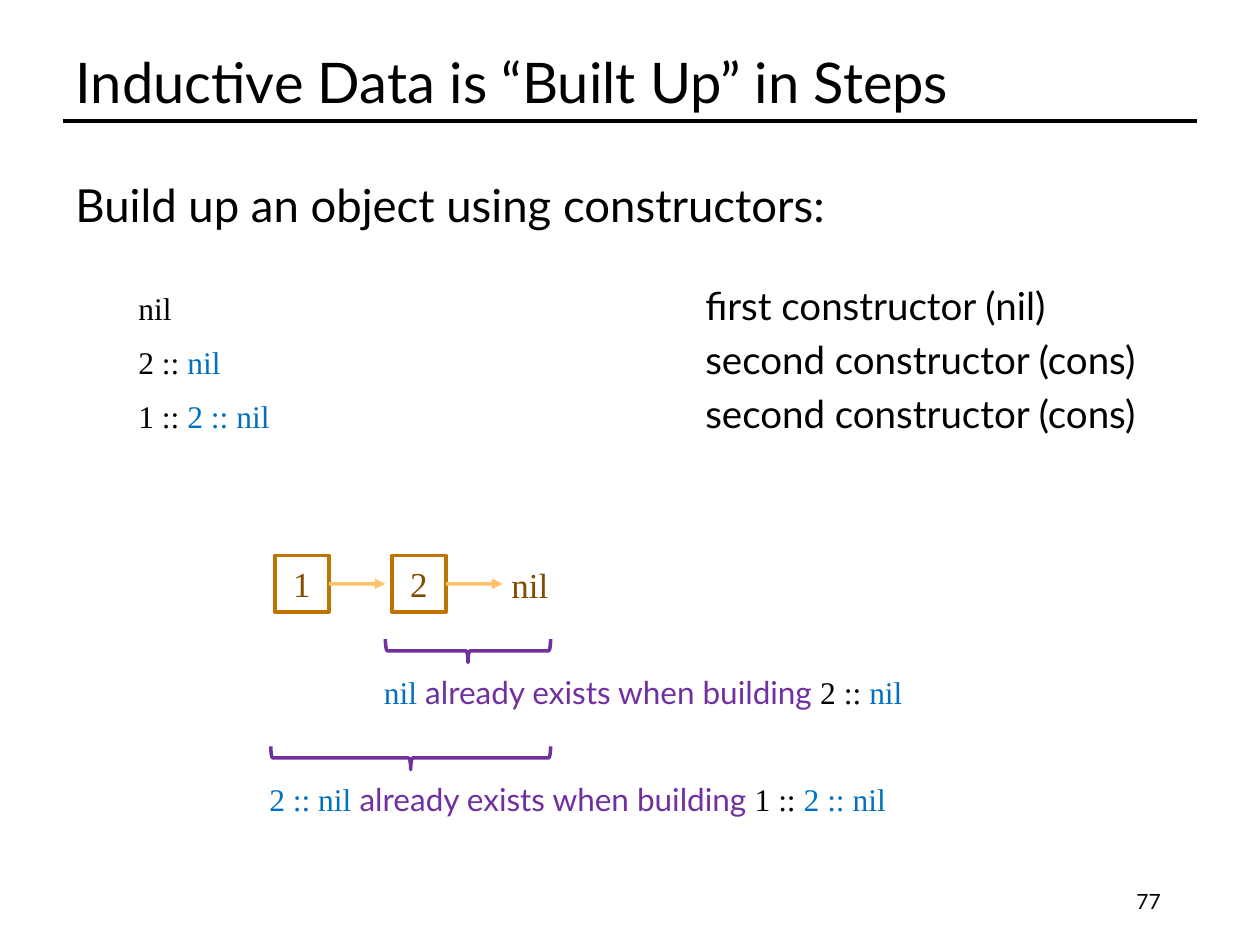
from lxml import etree
from pptx import Presentation
from pptx.dml.color import RGBColor
from pptx.enum.shapes import MSO_CONNECTOR, MSO_SHAPE
from pptx.enum.text import MSO_ANCHOR, PP_ALIGN
from pptx.oxml.ns import qn
from pptx.util import Cm, Pt

STRAIGHT = MSO_CONNECTOR.STRAIGHT
RECT, BRACE = MSO_SHAPE.RECTANGLE, MSO_SHAPE.LEFT_BRACE
MIDDLE, BOTTOM = MSO_ANCHOR.MIDDLE, MSO_ANCHOR.BOTTOM
LEFT, CENTER, RIGHT = PP_ALIGN.LEFT, PP_ALIGN.CENTER, PP_ALIGN.RIGHT

SANS, SERIF = "Lato", "Times New Roman"
BLACK, BLUE, PURPLE = "000000", "0070C0", "7030A0"
BROWN, ORANGE, AMBER = "804C00", "BF7300", "FFC266"
rgb = RGBColor.from_string


def add_runs(p, *runs):
    """Add (text, font, size, colour) runs to a paragraph."""
    for text, name, size, color in runs:
        r = p.add_run()
        r.text = text
        r.font.name, r.font.size = name, Pt(size)
        r.font.color.rgb = rgb(color)


def add_line(x1, y1, x2, y2, color):
    line = s.shapes.add_connector(STRAIGHT, Cm(x1), Cm(y1), Cm(x2), Cm(y2))
    line.line.color.rgb = rgb(color)
    line.line.width = Pt(2)
    etree.SubElement(line._element.spPr, qn("a:effectLst"))
    return line


prs = Presentation()
prs.slide_width, prs.slide_height = Cm(25.4), Cm(19.05)
s = prs.slides.add_slide(prs.slide_layouts[5])

# Title and rule
title = s.shapes.title
title.left, title.top, title.width, title.height = Cm(1.27), Cm(0.76), Cm(22.86), Cm(1.68)
title.text_frame.vertical_anchor = BOTTOM
p = title.text_frame.paragraphs[0]
p.text = "Inductive Data is “Built Up” in Steps"
p.alignment = LEFT
p.font.name, p.font.size, p.font.color.rgb = SANS, Pt(32), rgb(BLACK)
add_line(1.27, 2.44, 24.13, 2.44, BLACK)

# Construction steps: value and constructor aligned on two tab stops
tf = s.shapes.add_textbox(Cm(1.27), Cm(3.45), Cm(22.86), Cm(6.07)).text_frame
tf.word_wrap = True
add_runs(tf.paragraphs[0], ("Build up an object using constructors:", SANS, 26, BLACK))
steps = [("nil", "", "first constructor (nil)", 28.8),
         ("2 :: ", "nil", "second constructor (cons)", 4.4),
         ("1 :: ", "2 :: nil", "second constructor (cons)", 4.4)]
for new, existing, constructor, gap in steps:
    p = tf.add_paragraph()
    p.space_before = Pt(gap)
    add_runs(p, ("\t" + new, SERIF, 18, BLACK))
    if existing:
        add_runs(p, (existing, SERIF, 18, BLUE))
    add_runs(p, ("\t" + constructor, SANS, 22, BLACK))
    tabs = etree.SubElement(p._p.get_or_add_pPr(), qn("a:tabLst"))
    for stop in (1.27, 12.7):
        etree.SubElement(tabs, qn("a:tab"), pos=str(Cm(stop)), algn="l")

# Linked list: boxed nodes, each with an arrow to the next item
node_y, node_w, node_h = 11.2, 1.09, 1.14
for number, x in (("1", 5.54), ("2", 7.9)):
    node = s.shapes.add_shape(RECT, Cm(x), Cm(node_y), Cm(node_w), Cm(node_h))
    node.shadow.inherit = False
    node.fill.background()
    node.line.color.rgb = rgb(ORANGE)
    node.line.width = Pt(2)
    tf = node.text_frame
    tf.vertical_anchor = MIDDLE
    p = tf.paragraphs[0]
    p.alignment = CENTER
    add_runs(p, (number, SERIF, 20, BROWN))
    mid, right = node_y + node_h / 2, x + node_w
    arrow = add_line(right, mid, right + 1.14, mid, AMBER)
    arrow.begin_connect(node, 3)
    etree.SubElement(arrow.line._get_or_add_ln(), qn("a:tailEnd"), type="triangle")

tf = s.shapes.add_textbox(Cm(10.06), Cm(11.23), Cm(1.63), Cm(1.12)).text_frame
tf.word_wrap = True
add_runs(tf.paragraphs[0], ("nil", SERIF, 20, BROWN))

# Braces under the list, with captions; both end at the same right edge
brace_right, depth = 11.1, 0.47
captions = [(7.77, 13.12, 7.49, 13.44, 11.18, "nil", "2 :: "),
            (5.46, 15.28, 5.18, 15.6, 13.21, "2 :: nil", "1 :: ")]
for left, mid, x, y, width, existing, new in captions:
    span = brace_right - left
    brace = s.shapes.add_shape(BRACE, Cm(left + (span - depth) / 2),
                               Cm(mid - span / 2), Cm(depth), Cm(span))
    brace.rotation = 270
    brace.shadow.inherit = False
    brace.fill.background()
    brace.line.color.rgb = rgb(PURPLE)
    brace.line.width = Pt(2)
    tf = s.shapes.add_textbox(Cm(x), Cm(y), Cm(width), Cm(1.02)).text_frame
    tf.word_wrap = False
    add_runs(tf.paragraphs[0],
             (existing, SERIF, 18, BLUE),
             (" already exists when building ", SANS, 18, PURPLE),
             (new, SERIF, 18, BLACK),
             (existing, SERIF, 18, BLUE))

# Page number
tf = s.shapes.add_textbox(Cm(17.93), Cm(17.65), Cm(5.72), Cm(1.02)).text_frame
tf.word_wrap = True
tf.vertical_anchor = MIDDLE
p = tf.paragraphs[0]
p.alignment = RIGHT
add_runs(p, ("77", SANS, 12, BLACK))

prs.save("out.pptx")
